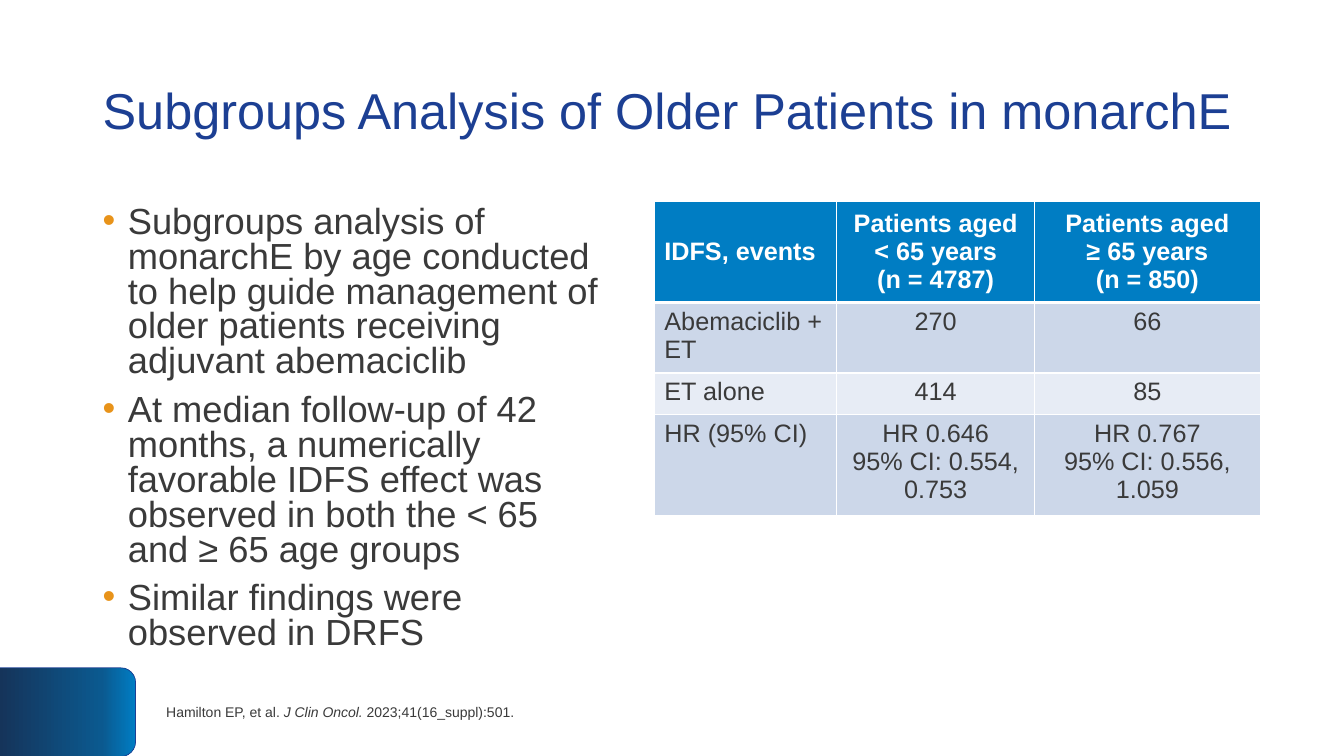
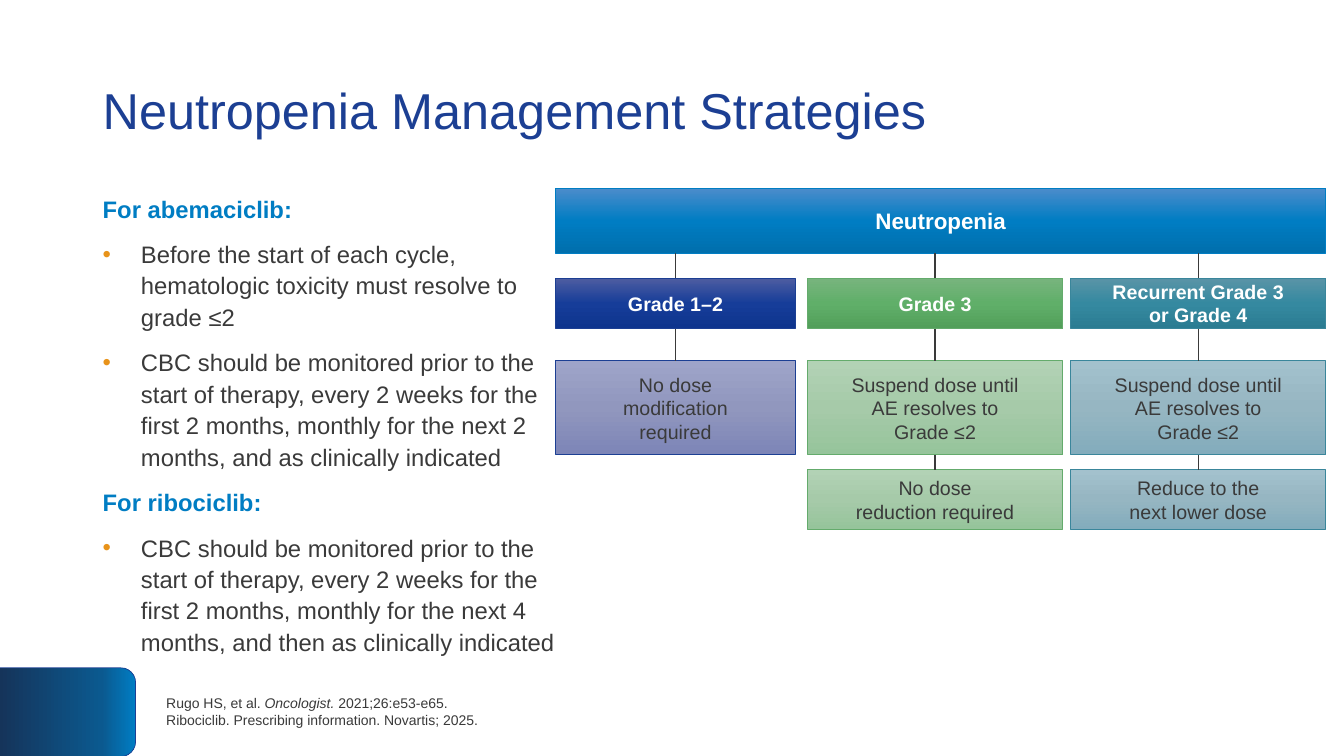
import lxml.etree
import pptx
import pptx.dml.color
import pptx.enum.shapes
import pptx.enum.text
import pptx.oxml.ns
import pptx.util

Inches = pptx.util.Inches
Pt = pptx.util.Pt
SHAPE = pptx.enum.shapes.MSO_SHAPE
ANCHOR = pptx.enum.text.MSO_ANCHOR
ALIGN = pptx.enum.text.PP_ALIGN
qn = pptx.oxml.ns.qn

FONT = "Arial"
NAVY, BLUE, ORANGE, INK, WHITE = "1C3F93", "007DC3", "E8931A", "3A3A3A", "FFFFFF"
BAND_STOPS = [(0, BLUE), (25, "0B598F"), (100, "15345A")]
TOP, LEFT, BOTTOM = 0, 1, 2


def colour(value):
    return pptx.dml.color.RGBColor.from_string(value)


def add_child(parent, tag, **attributes):
    return lxml.etree.SubElement(parent, qn(tag), **attributes)


def write_spans(para, content, size, ink=INK, bold=False):
    """Fill a paragraph from a string, or from (text, italic) pairs; a newline breaks the line."""
    spans = [(content, False)] if isinstance(content, str) else content
    for text, italic in spans:
        for number, line in enumerate(text.split("\n")):
            if number:
                para.add_line_break()
            span = para.add_run()
            span.text = line
            span.font.name = FONT
            span.font.size = Pt(size)
            span.font.bold = bold
            span.font.italic = italic
            span.font.color.rgb = colour(ink)


def set_bullet(para, indent):
    properties = para._p.get_or_add_pPr()
    properties.set("marL", str(Inches(indent)))
    properties.set("indent", str(-Inches(indent)))
    bullet_colour = add_child(properties, "a:buClr")
    add_child(bullet_colour, "a:srgbClr", val=ORANGE)
    add_child(properties, "a:buFont", typeface=FONT)
    add_child(properties, "a:buChar", char="•")


def write(frame, paragraphs, size, ink=INK, bold=False, align=ALIGN.LEFT,
          anchor=ANCHOR.TOP, spacing=None, before=0, indent=None):
    """Write paragraphs; with an indent they are bulleted, save those given as ("heading", text)."""
    frame.word_wrap = True
    frame.vertical_anchor = anchor
    for number, content in enumerate(paragraphs):
        para = frame.add_paragraph() if number else frame.paragraphs[0]
        heading = isinstance(content, tuple)
        if indent and not heading:
            set_bullet(para, indent)
        para.alignment = align
        if spacing:
            para.line_spacing = spacing
        if number and before:
            para.space_before = Pt(before)
        if heading:
            write_spans(para, content[1], size, BLUE, True)
        else:
            write_spans(para, content, size, ink, bold)


def add_text(page, left, top, width, height, paragraphs, **style):
    box = page.shapes.add_textbox(Inches(left), Inches(top), Inches(width), Inches(height))
    write(box.text_frame, paragraphs, **style)


def add_gradient_shape(page, kind, left, top, width, height, stops, outline):
    shape = page.shapes.add_shape(kind, Inches(left), Inches(top), Inches(width), Inches(height))
    shape.shadow.inherit = False
    shape.fill.gradient()
    shape.fill.gradient_angle = 270
    stop_list = shape.element.spPr.find(".//" + qn("a:gsLst"))
    for stop in list(stop_list):
        stop_list.remove(stop)
    for position, value in stops:
        stop = add_child(stop_list, "a:gs", pos=str(position * 1000))
        add_child(stop, "a:srgbClr", val=value)
    shape.line.color.rgb = colour(outline)
    shape.line.width = Pt(0.5)
    return shape


def add_box(page, left, top, width, height, text, shades, outline, **style):
    box = add_gradient_shape(page, SHAPE.RECTANGLE, left, top, width, height,
                             list(zip((0, 50, 100), shades)), outline)
    write(box.text_frame, [text], align=ALIGN.CENTER, anchor=ANCHOR.MIDDLE, **style)
    return box


def add_link(page, upper, lower):
    """Join two boxes by a vertical line at the middle of the lower one."""
    middle = lower.left + lower.width // 2
    link = page.shapes.add_connector(pptx.enum.shapes.MSO_CONNECTOR.STRAIGHT,
                                     middle, upper.top + upper.height, middle, lower.top)
    if upper.left + upper.width // 2 == middle:
        link.begin_connect(upper, BOTTOM)
    link.end_connect(lower, TOP)
    link.line.color.rgb = colour(INK)
    link.line.width = Pt(1)
    add_child(link.element.spPr, "a:effectLst")


def set_borders(cell, bottom):
    properties = cell._tc.get_or_add_tcPr()
    for number, (side, width) in enumerate((("L", 1), ("R", 1), ("T", 1), ("B", bottom))):
        border = lxml.etree.Element(qn("a:ln" + side), w=str(Pt(width)))
        add_child(add_child(border, "a:solidFill"), "a:srgbClr", val=WHITE)
        properties.insert(number, border)


def add_results_table(page, left, top, widths, heights, rows):
    frame = page.shapes.add_table(len(rows), len(widths), Inches(left), Inches(top),
                                  Inches(sum(widths)), Inches(sum(heights)))
    table = frame.table
    for column, width in zip(table.columns, widths):
        column.width = Inches(width)
    for row_number, (row, height) in enumerate(zip(rows, heights)):
        table.rows[row_number].height = Inches(height)
        header = row_number == 0
        shade = BLUE if header else ("E7ECF5", "CCD7E9")[row_number % 2]
        for column_number, paragraphs in enumerate(row):
            cell = table.cell(row_number, column_number)
            cell.fill.solid()
            cell.fill.fore_color.rgb = colour(shade)
            set_borders(cell, 3 if header else 1)
            write(cell.text_frame, paragraphs, size=18, bold=header,
                  ink=WHITE if header else INK,
                  align=ALIGN.CENTER if column_number else ALIGN.LEFT)
            cell.vertical_anchor = ANCHOR.MIDDLE if header else ANCHOR.TOP


def start_page(deck, title, reference):
    """Add a slide with the shared corner band, title and reference."""
    page = deck.slides.add_slide(deck.slide_layouts[6])
    band = add_gradient_shape(page, SHAPE.ROUND_2_SAME_RECTANGLE, 0.23, 6.39, 0.88, 1.35,
                              BAND_STOPS, NAVY)
    band.rotation = 90
    add_text(page, 0.92, 0.4, 11.5, 1.45, [title], size=36, ink=NAVY,
             anchor=ANCHOR.MIDDLE, spacing=0.9)
    add_text(page, 1.55, 6.62, 11.65, 0.88, [reference], size=10, anchor=ANCHOR.MIDDLE)
    return page


def build_subgroups(deck):
    page = start_page(deck, "Subgroups Analysis of Older Patients in monarchE",
                      [("Hamilton EP, et al. ", False), ("J Clin Oncol. ", True),
                       ("2023;41(16_suppl):501.", False)])
    add_text(page, 0.92, 2, 5.32, 4.62, [
        "Subgroups analysis of monarchE by age conducted to help guide management of "
        "older patients receiving adjuvant abemaciclib",
        "At median follow-up of 42 months, a numerically favorable IDFS effect was "
        "observed in both the < 65\nand ≥ 65 age groups",
        "Similar findings were observed in DRFS",
    ], size=25.9, spacing=0.8, before=10, indent=0.25)
    add_results_table(page, 6.49, 2, (1.81, 1.96, 2.24), (0.93, 0.65, 0.41, 0.94), [
        (["IDFS, events"], ["Patients aged\n< 65 years", "(n = 4787)"],
         ["Patients aged\n≥ 65 years", "(n = 850)"]),
        (["Abemaciclib + ET"], ["270"], ["66"]),
        (["ET alone"], ["414"], ["85"]),
        (["HR (95% CI)"], ["HR 0.646", "95% CI: 0.554, 0.753"],
         ["HR 0.767", "95% CI: 0.556, 1.059"]),
    ])


def build_neutropenia(deck):
    page = start_page(deck, "Neutropenia Management Strategies",
                      [("Rugo HS, et al. ", False), ("Oncologist. ", True),
                       ("2021;26:e53-e65.\nRibociclib. Prescribing information. "
                        "Novartis; 2025.", False)])
    monitoring = ("CBC should be monitored prior to the start of therapy, every 2 weeks for "
                  "the first 2 months, monthly for the next ")
    add_text(page, 0.92, 1.85, 4.78, 4.62, [
        ("heading", "For abemaciclib:"),
        "Before the start of each cycle, hematologic toxicity must resolve to grade ≤2",
        monitoring + "2 months, and as clinically indicated",
        ("heading", "For ribociclib:"),
        monitoring + "4 months, and then as clinically indicated",
    ], size=17, spacing=1.1, before=10, indent=0.38)

    banner = add_box(page, 5.51, 1.87, 7.64, 0.64, "Neutropenia",
                     ("4B8CCB", BLUE, "006FAD"), BLUE, size=16, ink=WHITE, bold=True)
    suspend = "Suspend dose until\nAE resolves to\nGrade ≤2"
    branches = [
        (5.51, 2.38, NAVY, ("4E5DA1", "163D99", "0E348D"), ("9EA4C9", "9197BE", "7D85B7"),
         "Grade 1–2", ["No dose\nmodification\nrequired"]),
        (8.01, 2.53, "64AB6C", ("78B47E", "60AF69", "529F5A"), ("B2D2B5", "A6CAA9", "96C49B"),
         "Grade 3", [suspend, "No dose\nreduction required"]),
        (10.62, 2.53, "3A869B", ("5A94A7", "3589A0", "2B7C92"), ("A3C1CD", "96B6C2", "83ACBC"),
         "Recurrent Grade 3\nor Grade 4", [suspend, "Reduce to the\nnext lower dose"]),
    ]
    for left, width, outline, strong, pale, grade, actions in branches:
        upper = add_box(page, left, 2.76, width, 0.5, grade, strong, outline,
                        size=14, ink=WHITE, bold=True)
        add_link(page, banner, upper)
        for (top, height), action in zip(((3.58, 0.93), (4.66, 0.59)), actions):
            lower = add_box(page, left, top, width, height, action, pale, outline, size=14)
            add_link(page, upper, lower)
            upper = lower


def main():
    deck = pptx.Presentation()
    deck.slide_width = Inches(13.33)
    deck.slide_height = Inches(7.5)
    build_subgroups(deck)
    build_neutropenia(deck)
    deck.save("out.pptx")


if __name__ == "__main__":
    main()
